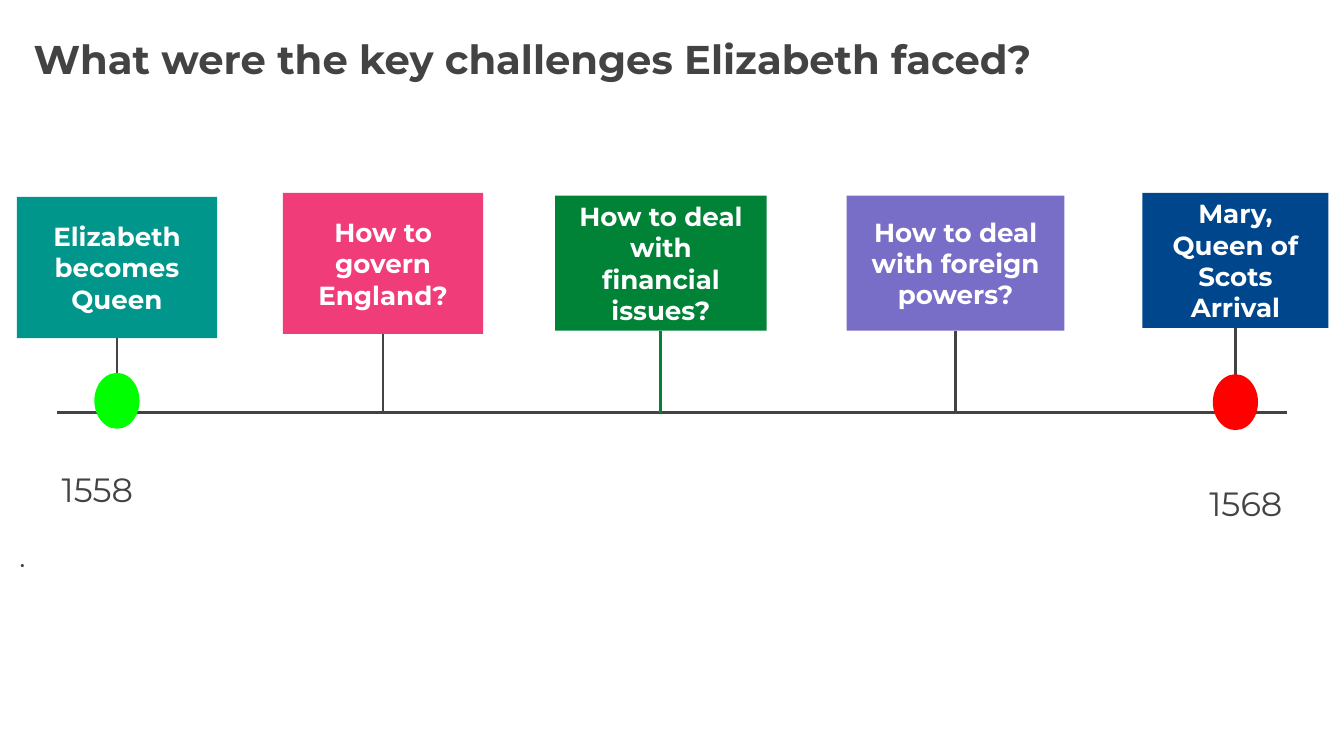
from lxml import etree
from pptx import Presentation
from pptx.dml.color import RGBColor
from pptx.enum import shapes, text
from pptx.oxml import ns
from pptx.util import Pt

INK = RGBColor(0x43, 0x43, 0x43)
WHITE = RGBColor(0xFF, 0xFF, 0xFF)
TEAL = RGBColor(0x00, 0x96, 0x8C)
PINK = RGBColor(0xF0, 0x3C, 0x78)
GREEN = RGBColor(0x00, 0x82, 0x37)
PURPLE = RGBColor(0x78, 0x6E, 0xC8)
NAVY = RGBColor(0x00, 0x46, 0x8C)
LIME = RGBColor(0x00, 0xFF, 0x00)
RED = RGBColor(0xFF, 0x00, 0x00)

FONT = "Montserrat"
AXIS_Y = 442
MARKER_WIDTH, MARKER_HEIGHT = 45.4, 56.9

EVENTS = [
    ("Elizabeth becomes Queen", (18, 211, 214.6, 151.2), TEAL, INK),
    ("How to govern England?", (303.1, 206.6, 214.6, 151.2), PINK, INK),
    ("How to deal with financial issues?", (594.7, 209.5, 226.8, 144.7), GREEN, GREEN),
    ("How to deal with foreign powers?", (907.2, 209.5, 233.3, 144.7), PURPLE, INK),
    ("Mary, Queen of Scots Arrival", (1224, 206.6, 199.4, 144.7), NAVY, INK),
]


def set_frame(frame, margin=0, anchor=text.MSO_ANCHOR.TOP):
    """Set wrapping, equal insets and the vertical anchor of a text frame."""
    frame.word_wrap = True
    frame.auto_size = text.MSO_AUTO_SIZE.NONE
    frame.vertical_anchor = anchor
    frame.margin_left = frame.margin_right = Pt(margin)
    frame.margin_top = frame.margin_bottom = Pt(margin)


def write(paragraph, words, size, color=INK, bold=False,
          align=text.PP_ALIGN.LEFT, spacing=1.0, before=0):
    """Write formatted words into a paragraph."""
    paragraph.text = words
    paragraph.alignment = align
    paragraph.line_spacing = spacing
    paragraph.space_before = Pt(before)
    paragraph.font.name = FONT
    paragraph.font.size = Pt(size)
    paragraph.font.bold = bold
    paragraph.font.color.rgb = color


def add_line(slide, start, end, color=INK):
    """Draw a straight line without a shadow."""
    line = slide.shapes.add_connector(
        shapes.MSO_CONNECTOR.STRAIGHT, *(Pt(v) for v in (*start, *end)))
    line.line.color.rgb = color
    line.line.width = Pt(3)
    etree.SubElement(line._element.spPr, ns.qn("a:effectLst"))


def add_filled(slide, preset, box, color, outline=0):
    """Draw a filled preset shape, outlined in its own colour if asked."""
    shape = slide.shapes.add_shape(preset, *(Pt(v) for v in box))
    shape.shadow.inherit = False
    shape.fill.solid()
    shape.fill.fore_color.rgb = color
    if outline:
        shape.line.color.rgb = color
        shape.line.width = Pt(outline)
    else:
        shape.line.fill.background()
    return shape


def add_title(slide, box, words):
    """Place and format the title placeholder."""
    title = slide.shapes.title
    title.left, title.top, title.width, title.height = (Pt(v) for v in box)
    set_frame(title.text_frame)
    write(title.text_frame.paragraphs[0], words, 43, bold=True, spacing=1.15)


def add_event(slide, box, words, color, stem_color):
    """Place an event card with a stem down to the axis."""
    left, top, width, height = box
    center = left + width / 2
    add_line(slide, (center, top + height), (center, AXIS_Y), stem_color)
    card = add_filled(slide, shapes.MSO_SHAPE.RECTANGLE, box, color)
    set_frame(card.text_frame, 14.4, text.MSO_ANCHOR.MIDDLE)
    write(card.text_frame.paragraphs[0], words, 28, WHITE, True,
          text.PP_ALIGN.CENTER)


def add_marker(slide, card_box, top, color):
    """Place an oval on the axis, centred below a card."""
    left = card_box[0] + (card_box[2] - MARKER_WIDTH) / 2
    add_filled(slide, shapes.MSO_SHAPE.OVAL,
               (left, top, MARKER_WIDTH, MARKER_HEIGHT), color, 3)


def add_date(slide, box, year, spacing):
    """Place a centred year and return its text frame."""
    frame = slide.shapes.add_textbox(*(Pt(v) for v in box)).text_frame
    set_frame(frame)
    write(frame.paragraphs[0], year, 36, align=text.PP_ALIGN.CENTER,
          spacing=spacing)
    return frame


def add_timeline(slide):
    """Place the axis, the event cards, the end markers and the dates."""
    add_line(slide, (61.2, AXIS_Y), (1378.8, AXIS_Y))
    for words, box, color, stem_color in EVENTS:
        add_event(slide, box, words, color, stem_color)
    add_marker(slide, EVENTS[0][1], 401, LIME)
    add_marker(slide, EVENTS[-1][1], 402.5, RED)
    start_date = add_date(slide, (20.9, 496, 167, 199.4), "1558", 1.15)
    write(start_date.add_paragraph(), ".", 31, spacing=1.3, before=20)
    add_date(slide, (1255.7, 496, 158.4, 199.4), "1568", 1.5)


def main():
    """Build and save the slide."""
    deck = Presentation()
    deck.slide_width, deck.slide_height = Pt(1440), Pt(810)
    slide = deck.slides.add_slide(deck.slide_layouts.get_by_name("Title Only"))
    add_title(slide, (36, 29.5, 1358, 76.3),
              "What were the key challenges Elizabeth faced?")
    add_timeline(slide)
    deck.save("out.pptx")


if __name__ == "__main__":
    main()
